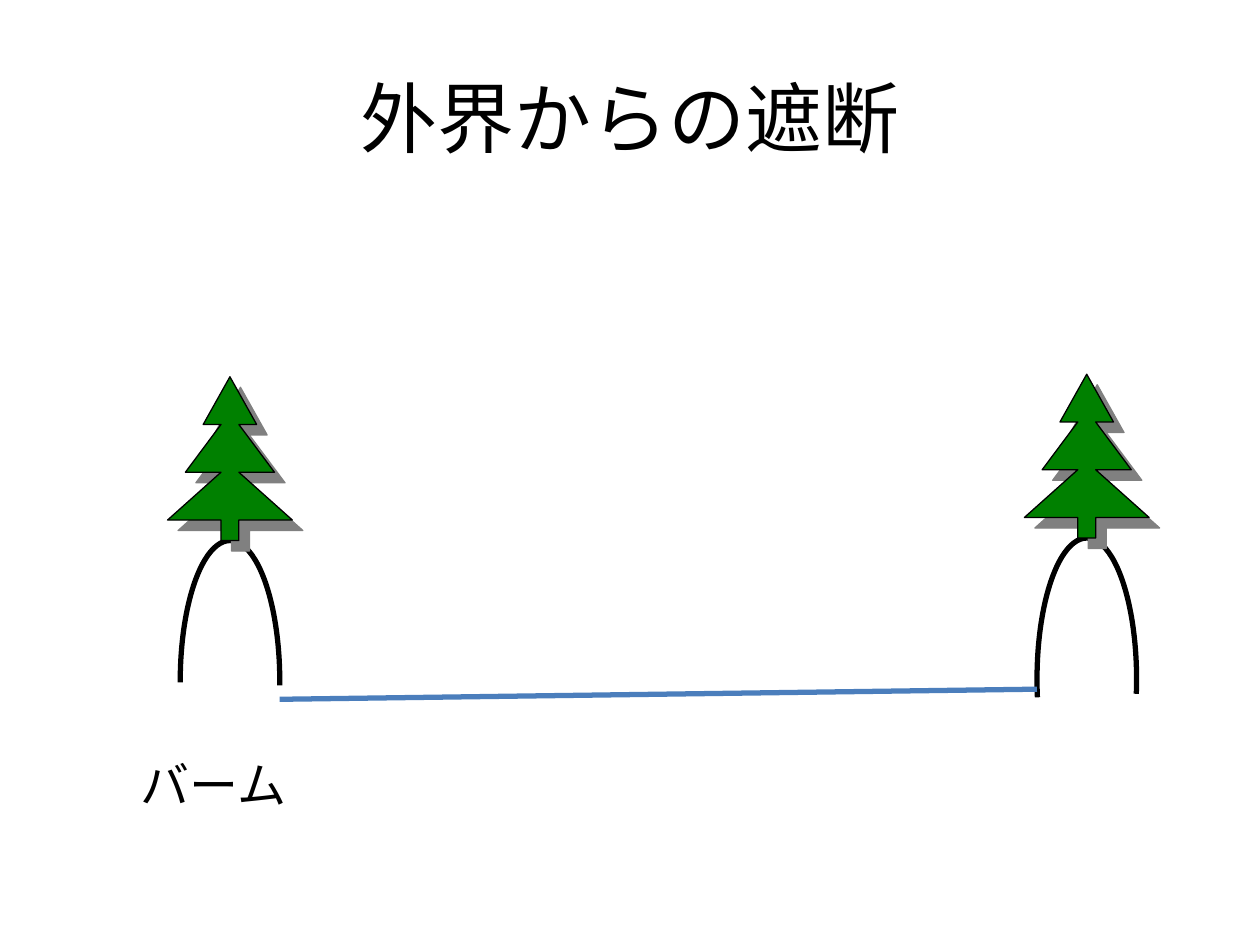
from dataclasses import dataclass

from lxml.etree import SubElement
from pptx import Presentation
from pptx.dml.color import RGBColor
from pptx.enum.shapes import MSO_CONNECTOR, MSO_SHAPE
from pptx.enum.text import MSO_ANCHOR, MSO_AUTO_SIZE, PP_ALIGN
from pptx.oxml.ns import qn
from pptx.util import Inches, Pt

WIDE, HIGH = Inches(10), Inches(7.5)
TREE_W, TREE_H = 9.9, 17.33
BERM_W, BERM_H = 7.9, 29.87
COLS, ROWS = 14, 24
HALF = [(0, 0), (3, 7), (1, 7), (5, 14), (1, 14), (7, 21), (1, 21), (1, 24)]


@dataclass(frozen=True)
class Theme:
    """Colours, fonts and sizes of the slide."""
    ink: str = "000000"
    leaf: str = "008000"
    shade: str = "808080"
    ground: str = "4B7EBC"
    head: str = "Calibri"
    body: str = "Arial"
    big: float = 44
    mid: float = 28
    thick: float = 3
    thin: float = 0.75


THEME = Theme()


def across(share):
    """Turn a percentage of the slide's width into a length."""
    return round(WIDE * share / 100)


def down(share):
    """Turn a percentage of the slide's height into a length."""
    return round(HIGH * share / 100)


def box(left, top, width, height):
    """Turn four percentages into a position and a size."""
    return across(left), down(top), across(width), down(height)


def stroke(line, color, width):
    """Set the colour and width of a line."""
    line.color.rgb = RGBColor.from_string(color)
    line.width = Pt(width)


def write(frame, text, face, size, align):
    """Write one styled paragraph into a text frame."""
    frame.text = text
    para = frame.paragraphs[0]
    para.alignment = align
    para.font.name = face
    para.font.size = Pt(size)
    para.font.color.rgb = RGBColor.from_string(THEME.ink)


def add_title(slide, text):
    """Place the title in its placeholder."""
    title = slide.shapes.title
    title.left, title.top, title.width, title.height = box(5, 4, 90, 16.67)
    title.text_frame.vertical_anchor = MSO_ANCHOR.MIDDLE
    write(title.text_frame, text, THEME.head, THEME.big, PP_ALIGN.CENTER)


def add_label(slide, text, place):
    """Add a caption that grows with its text."""
    frame = slide.shapes.add_textbox(*box(*place)).text_frame
    frame.word_wrap = True
    frame.auto_size = MSO_AUTO_SIZE.SHAPE_TO_FIT_TEXT
    write(frame, text, THEME.body, THEME.mid, PP_ALIGN.LEFT)


def add_berm(slide, left, top, ends):
    """Add an open mound drawn as an arc."""
    berm = slide.shapes.add_shape(MSO_SHAPE.ARC, *box(left, top, BERM_W, BERM_H))
    berm.rotation = 180
    berm.adjustments[0], berm.adjustments[1] = ends
    berm.shadow.inherit = False
    berm.fill.background()
    stroke(berm.line, THEME.ink, THEME.thick)


def add_ground(slide, start, end):
    """Add the ground line between the berms."""
    line = slide.shapes.add_connector(
        MSO_CONNECTOR.STRAIGHT,
        across(start[0]), down(start[1]), across(end[0]), down(end[1]))
    stroke(line.line, THEME.ground, THEME.thick)
    SubElement(line._element.spPr, qn("a:effectLst"))


def cast(shape):
    """Give a shape a hard shadow down to the right."""
    shape.shadow.inherit = False
    effects = shape._element.spPr.find(qn("a:effectLst"))
    outer = SubElement(effects, qn("a:outerShdw"), blurRad="0",
                       dist=str(Pt(8.5)), dir=str(45 * 60000),
                       algn="ctr", rotWithShape="0")
    SubElement(outer, qn("a:srgbClr"), val=THEME.shade)


def add_tree(slide, left, top):
    """Add a three-tier fir, mirrored about its trunk."""
    mid = COLS // 2
    right = [(mid + x, y) for x, y in HALF]
    other = [(mid - x, y) for x, y in HALF[:0:-1]]
    scale = across(TREE_W) / COLS, down(TREE_H) / ROWS
    pen = slide.shapes.build_freeform(*right[0], scale=scale)
    pen.add_line_segments(right[1:] + other, close=True)
    tree = pen.convert_to_shape(across(left), down(top))
    tree.fill.solid()
    tree.fill.fore_color.rgb = RGBColor.from_string(THEME.leaf)
    stroke(tree.line, THEME.ink, THEME.thin)
    cast(tree)


def add_screen(slide, left, top, ends):
    """Add a berm with a tree on its crest."""
    inset = (TREE_W - BERM_W) / 2
    add_berm(slide, left + inset, top + TREE_H, ends)
    add_tree(slide, left, top)


def main():
    """Build and save the slide."""
    deck = Presentation()
    deck.slide_width, deck.slide_height = WIDE, HIGH
    slide = deck.slides.add_slide(deck.slide_layouts[5])
    add_title(slide, "外界からの遮断")
    add_screen(slide, 13.3, 39.87, (215.49, 110.48))
    add_screen(slide, 81.3, 39.6, (203.88, 117.87))
    add_ground(slide, (22.2, 74), (82.3, 72.93))
    add_label(slide, "バーム", (10.2, 79.2, 26, 7.6))
    deck.save("out.pptx")


if __name__ == "__main__":
    main()
